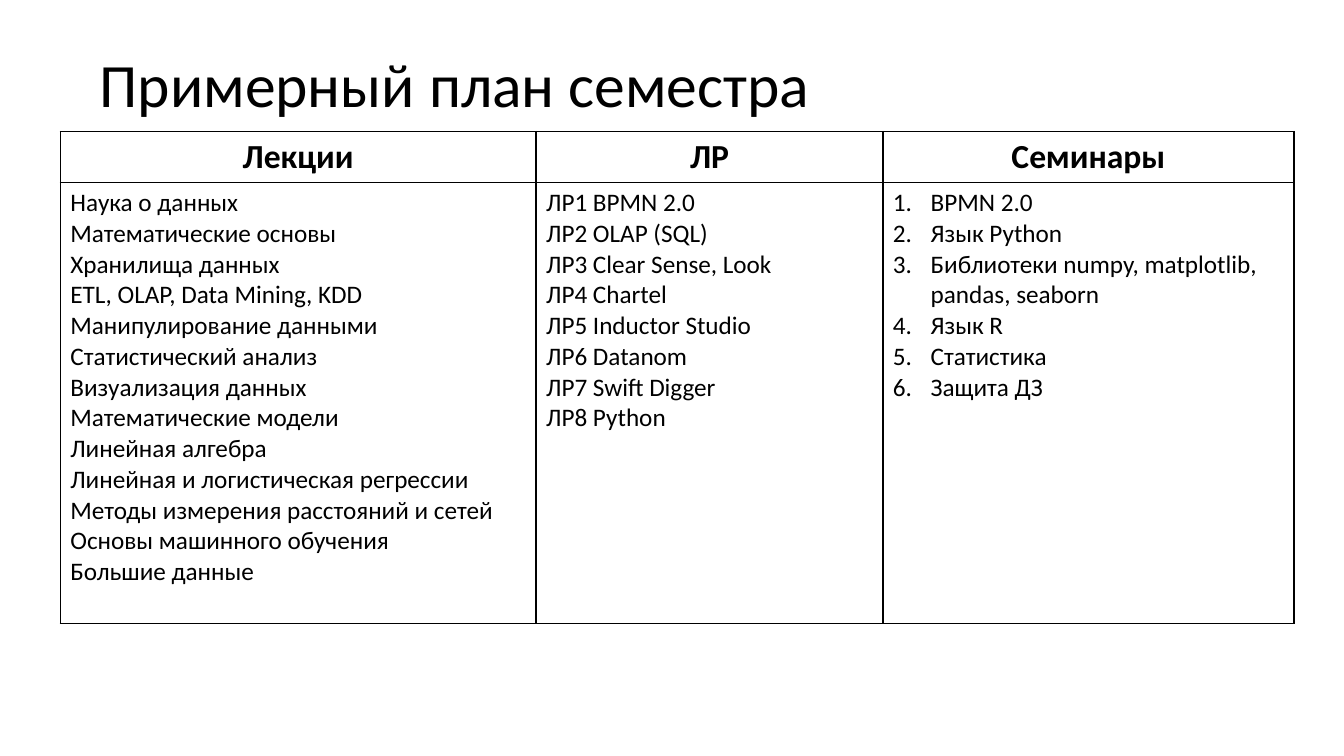
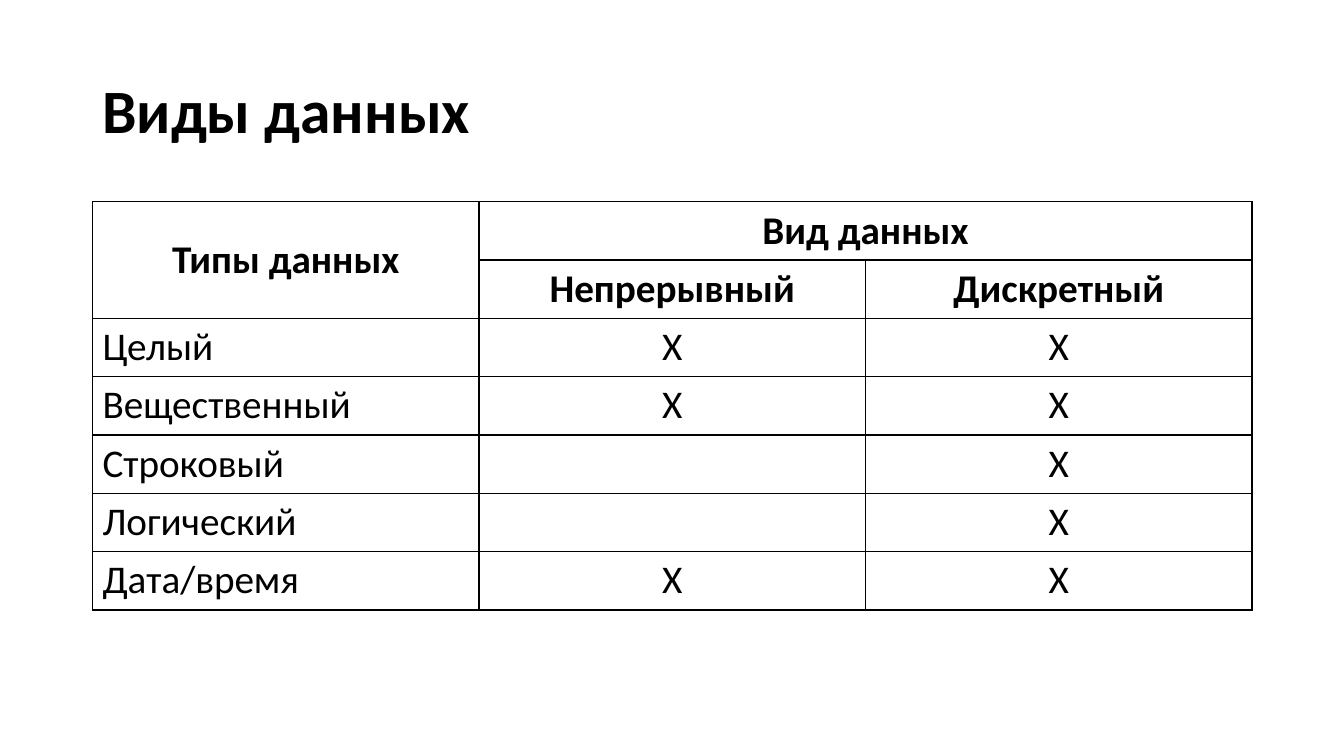
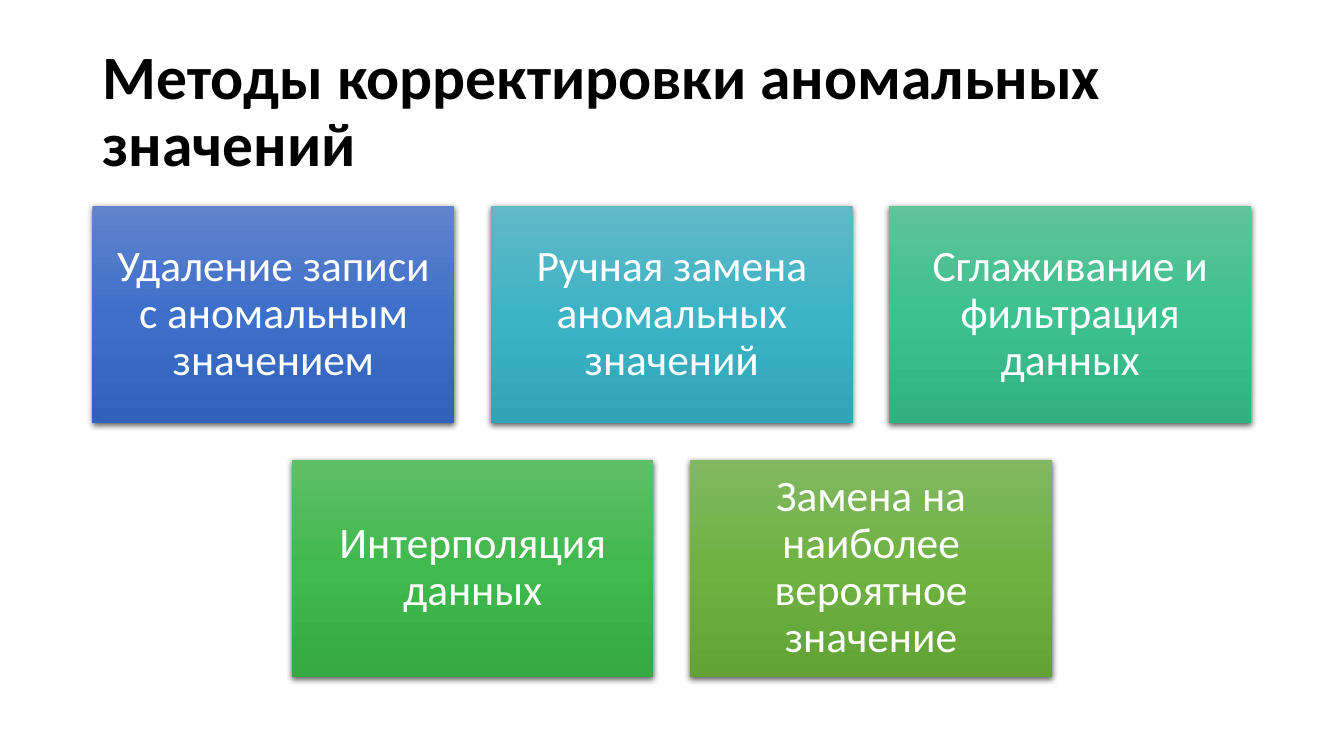
"""Build three slides on a data course: semester plan, kinds of data, anomaly correction."""
from copy import deepcopy
from dataclasses import dataclass

from lxml.etree import SubElement
from pptx import Presentation
from pptx.dml.color import RGBColor
from pptx.enum.shapes import MSO_SHAPE
from pptx.enum.text import MSO_ANCHOR, PP_ALIGN
from pptx.oxml.ns import qn
from pptx.util import Cm, Pt


@dataclass(frozen=True)
class Theme:
    font: str = "Calibri"
    text: RGBColor = RGBColor(0, 0, 0)
    card_text: RGBColor = RGBColor(255, 255, 255)
    border: str = "000000"
    shadow: str = "000000"
    title_size: int = 44
    plan_header_size: int = 24
    plan_size: int = 18
    kinds_size: int = 28
    card_size: int = 31
    card_gradients: tuple = (
        ("6183CB", "3E70CA", "3062BB"),
        ("61B8C7", "3DB4C6", "30A5B7"),
        ("60C39A", "3DC18F", "31B080"),
        ("60BE68", "40B94D", "34AA41"),
        ("81B861", "6FB242", "62A336"),
    )


theme = Theme()


def write_text(text_frame, text, size, color=theme.text, bold=False, align=PP_ALIGN.LEFT, spacing=None):
    text_frame.text = text
    for paragraph in text_frame.paragraphs:
        paragraph.alignment = align
        paragraph.line_spacing = spacing
        for run in paragraph.runs:
            run.font.name = theme.font
            run.font.size = Pt(size)
            run.font.bold = bold
            run.font.color.rgb = color


def add_grid(slide, left, top, column_widths, row_heights):
    frame = slide.shapes.add_table(
        len(row_heights), len(column_widths), Cm(left), Cm(top),
        Cm(sum(column_widths)), Cm(sum(row_heights)))
    table = frame.table
    table.first_row = table.horz_banding = False
    for column, width in zip(table.columns, column_widths):
        column.width = Cm(width)
    for row, height in zip(table.rows, row_heights):
        row.height = Cm(height)
    for cell in table.iter_cells():
        properties = cell._tc.get_or_add_tcPr()
        for side in ("a:lnL", "a:lnR", "a:lnT", "a:lnB"):
            line = SubElement(properties, qn(side), w=str(Pt(1)))
            fill = SubElement(line, qn("a:solidFill"))
            SubElement(fill, qn("a:srgbClr"), val=theme.border)
        cell.fill.background()
    return table


presentation = Presentation()
presentation.slide_width = Cm(33.87)
presentation.slide_height = Cm(19.05)

titles = (
    ("Примерный план семестра", 2.26, 0.36, False),
    ("Виды данных", 2.33, 1.01, True),
    ("Методы корректировки аномальных значений", 2.33, 1.01, True),
)
slides = []
for title, left, top, bold in titles:
    slide = presentation.slides.add_slide(presentation.slide_layouts[6])
    text_frame = slide.shapes.add_textbox(Cm(left), Cm(top), Cm(29.21), Cm(3.68)).text_frame
    text_frame.word_wrap = True
    text_frame.vertical_anchor = MSO_ANCHOR.MIDDLE
    write_text(text_frame, title, theme.title_size, bold=bold, spacing=0.9)
    slides.append(slide)
plan_slide, kinds_slide, methods_slide = slides

plan = {
    "Лекции": (
        "Наука о данных", "Математические основы", "Хранилища данных",
        "ETL, OLAP, Data Mining, KDD", "Манипулирование данными",
        "Статистический анализ", "Визуализация данных", "Математические модели",
        "Линейная алгебра", "Линейная и логистическая регрессии",
        "Методы измерения расстояний и сетей", "Основы машинного обучения",
        "Большие данные"),
    "ЛР": (
        "ЛР1 BPMN 2.0", "ЛР2 OLAP (SQL)", "ЛР3 Clear Sense, Look",
        "ЛР4 Chartel", "ЛР5 Inductor Studio", "ЛР6 Datanom",
        "ЛР7 Swift Digger", "ЛР8 Python"),
    "Семинары": (
        "BPMN 2.0", "Язык Python", "Библиотеки numpy, matplotlib, pandas, seaborn",
        "Язык R", "Статистика", "Защита ДЗ"),
}
plan_table = add_grid(plan_slide, 1.52, 3.31, (11.99, 8.74, 10.36), (1.29, 11.11))
for column, (header, topics) in enumerate(plan.items()):
    write_text(plan_table.cell(0, column).text_frame, header, theme.plan_header_size,
               bold=True, align=PP_ALIGN.CENTER)
    write_text(plan_table.cell(1, column).text_frame, "\n".join(topics), theme.plan_size)
for paragraph in plan_table.cell(1, 2).text_frame.paragraphs:
    properties = paragraph._p.get_or_add_pPr()
    properties.set("marL", str(Cm(0.95)))
    properties.set("indent", str(-Cm(0.95)))
    SubElement(properties, qn("a:buAutoNum"), type="arabicPeriod")

kinds = (
    ("Типы данных", "Вид данных", ""),
    ("", "Непрерывный", "Дискретный"),
    ("Целый", "Х", "Х"),
    ("Вещественный", "Х", "Х"),
    ("Строковый", "", "Х"),
    ("Логический", "", "Х"),
    ("Дата/время", "Х", "Х"),
)
header_rows = 2
kinds_table = add_grid(kinds_slide, 2.33, 5.08, (9.74,) * 3, (1.47,) * len(kinds))
kinds_table.cell(0, 0).merge(kinds_table.cell(1, 0))
kinds_table.cell(0, 1).merge(kinds_table.cell(0, 2))
for row, values in enumerate(kinds):
    is_header = row < header_rows
    for column, value in enumerate(values):
        if not value:
            continue
        cell = kinds_table.cell(row, column)
        centred = is_header or column > 0
        write_text(cell.text_frame, value, theme.kinds_size, bold=is_header,
                   align=PP_ALIGN.CENTER if centred else PP_ALIGN.LEFT)
        if is_header:
            cell.vertical_anchor = MSO_ANCHOR.MIDDLE

method_rows = (
    ("Удаление записи с аномальным значением",
     "Ручная замена аномальных значений",
     "Сглаживание и фильтрация данных"),
    ("Интерполяция данных", "Замена на наиболее вероятное значение"),
)
card_width, card_height, card_gap = 9.12, 5.48, 0.92
cards_top, cards_center = 5.18, 16.93
gradients = iter(theme.card_gradients)
for row, methods in enumerate(method_rows):
    row_width = len(methods) * (card_width + card_gap) - card_gap
    for column, method in enumerate(methods):
        shape = methods_slide.shapes.add_shape(
            MSO_SHAPE.RECTANGLE,
            Cm(cards_center - row_width / 2 + column * (card_width + card_gap)),
            Cm(cards_top + row * (card_height + card_gap)),
            Cm(card_width), Cm(card_height))
        shape.line.fill.background()
        shape.fill.gradient()
        shape.fill.gradient_angle = 270
        stop_list = shape._element.spPr.find(".//" + qn("a:gsLst"))
        stop_list.append(deepcopy(stop_list[0]))
        for stop, color, position in zip(shape.fill.gradient_stops, next(gradients), (0, 0.5, 1)):
            stop.color.rgb = RGBColor.from_string(color)
            stop.position = position
        shape.shadow.inherit = False
        effects = shape._element.spPr.find(qn("a:effectLst"))
        shadow = SubElement(effects, qn("a:outerShdw"), blurRad=str(Pt(4.5)), dist=str(Pt(1.5)),
                            dir="5400000", algn="ctr", rotWithShape="0")
        shadow_color = SubElement(shadow, qn("a:srgbClr"), val=theme.shadow)
        SubElement(shadow_color, qn("a:alpha"), val="63000")
        text_frame = shape.text_frame
        text_frame.word_wrap = True
        text_frame.vertical_anchor = MSO_ANCHOR.MIDDLE
        text_frame.margin_left = text_frame.margin_right = Cm(0.33)
        text_frame.margin_top = text_frame.margin_bottom = Cm(0.33)
        write_text(text_frame, method, theme.card_size, color=theme.card_text,
                   align=PP_ALIGN.CENTER, spacing=0.9)

presentation.save("out.pptx")
